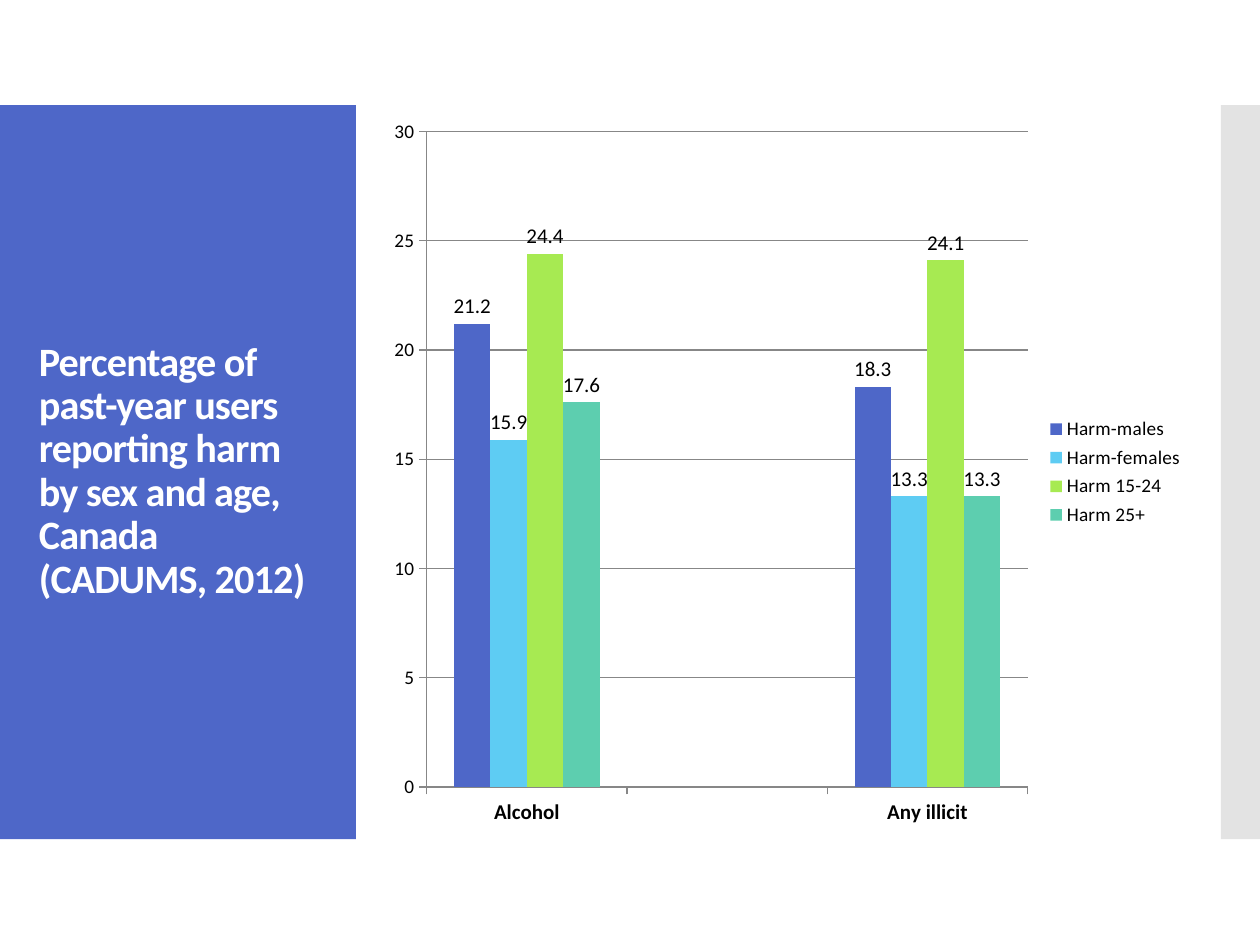
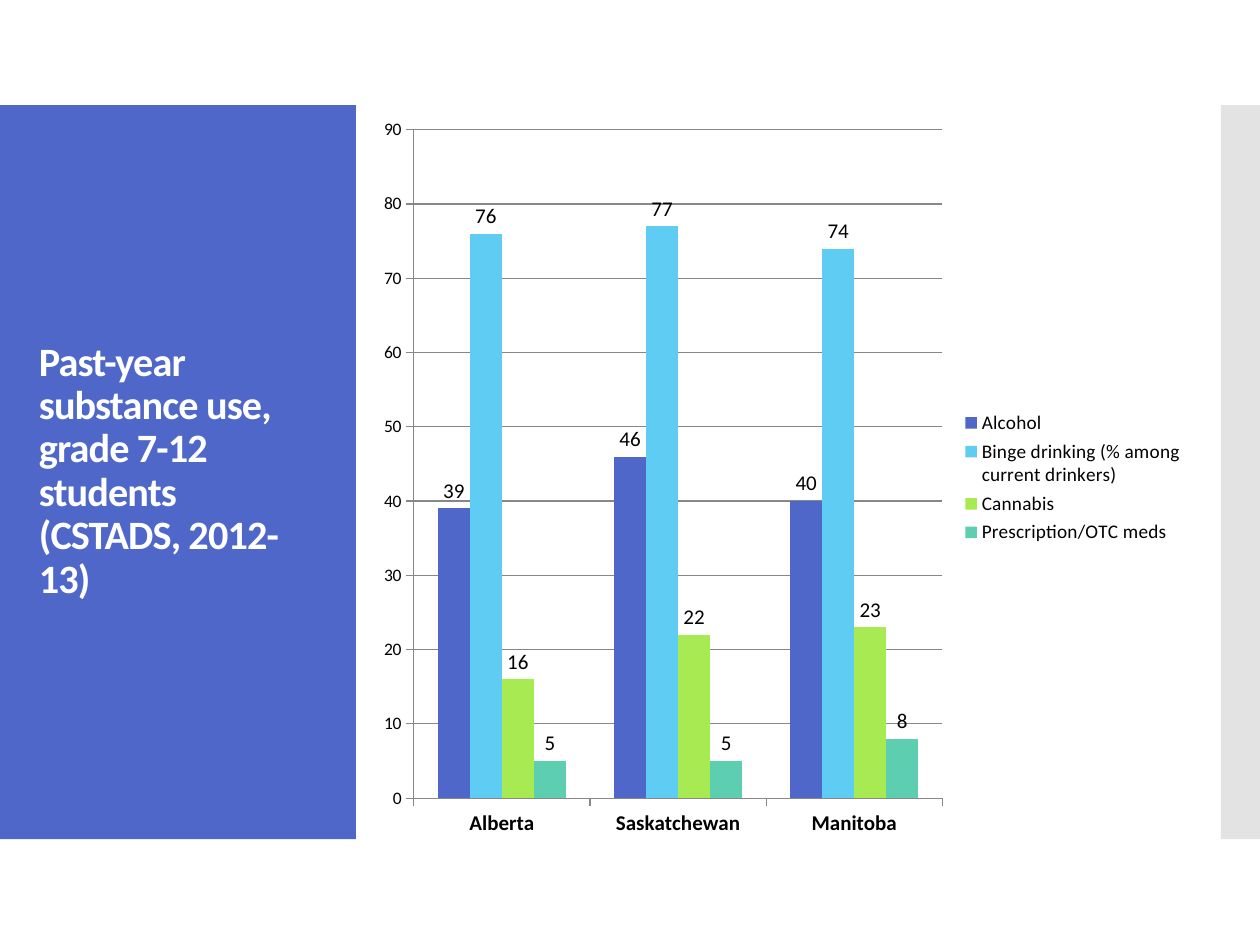
from lxml import etree
from pptx import Presentation
from pptx.chart.data import CategoryChartData
from pptx.dml.color import RGBColor
from pptx.enum.chart import XL_CHART_TYPE, XL_LABEL_POSITION, XL_LEGEND_POSITION, XL_TICK_MARK
from pptx.enum.shapes import MSO_SHAPE
from pptx.enum.text import MSO_ANCHOR, MSO_AUTO_SIZE, PP_ALIGN
from pptx.oxml.ns import qn
from pptx.util import Pt

COLUMNS = XL_CHART_TYPE.COLUMN_CLUSTERED
ABOVE_BAR = XL_LABEL_POSITION.OUTSIDE_END
LEGEND_RIGHT = XL_LEGEND_POSITION.RIGHT
TICK_OUT, TICK_NONE = XL_TICK_MARK.OUTSIDE, XL_TICK_MARK.NONE
RECTANGLE = MSO_SHAPE.RECTANGLE
MIDDLE = MSO_ANCHOR.MIDDLE
NO_FIT = MSO_AUTO_SIZE.NONE
LEFT = PP_ALIGN.LEFT

THEME = {
    "font": "Calibri",
    "blue": RGBColor(0x4E, 0x67, 0xC8),
    "gray": RGBColor(0xC8, 0xC8, 0xC8),
    "white": RGBColor(0xFF, 0xFF, 0xFF),
    "black": RGBColor(0x00, 0x00, 0x00),
    "rule": RGBColor(0x87, 0x87, 0x87),
    "series": [RGBColor.from_string(c) for c in ("4E67C8", "5ECCF3", "A7EA52", "5DCEAF")],
    "title_size": Pt(23),
    "label_size": Pt(12),
    "legend_size": Pt(11),
}

BAND_TOP, BAND_HEIGHT = Pt(60), Pt(419.5)
BANDS = [  # left, width, colour, opacity in percent
    (Pt(0), Pt(203.4), THEME["blue"], 100),
    (Pt(697.7), Pt(22.3), THEME["gray"], 50),
]
TITLE_BOX = {"left": Pt(15), "top": Pt(88.5), "width": Pt(174.4), "height": Pt(362)}

SURVEYS = [
    {
        "title": "Percentage of past-year users reporting harm by sex and age, Canada \v(CADUMS, 2012)",
        "box": (Pt(216), Pt(60), Pt(468), Pt(419.5)),
        "axis_size": Pt(11),
        "scale": {"minimum_scale": 0, "maximum_scale": 30, "major_unit": 5},
        "categories": ["Alcohol", "", "Any illicit"],
        "series": {
            "Harm-males": (21.2, None, 18.3),
            "Harm-females": (15.9, None, 13.3),
            "Harm 15-24": (24.4, None, 24.1),
            "Harm 25+": (17.6, None, 13.3),
        },
    },
    {
        "title": "Past-year substance use, grade 7-12 students (CSTADS, 2012-13)",
        "box": (Pt(210), Pt(60), Pt(474), Pt(426)),
        "axis_size": Pt(10),
        "scale": {"minimum_scale": 0, "maximum_scale": 90, "major_unit": 10},
        "categories": ["Alberta", "Saskatchewan", "Manitoba"],
        "series": {
            "Alcohol": (39, 46, 40),
            "Binge drinking (% among current drinkers)": (76, 77, 74),
            "Cannabis": (16, 22, 23),
            "Prescription/OTC meds": (5, 5, 8),
        },
    },
]


def apply(target, **values):
    for name, value in values.items():
        setattr(target, name, value)


def style_font(font, size, color=THEME["black"], bold=False):
    apply(font, name=THEME["font"], size=size, bold=bold)
    font.color.rgb = color


deck = Presentation()
apply(deck, slide_width=Pt(720), slide_height=Pt(540))
title_only = deck.slide_layouts[5]
slides = [deck.slides.add_slide(title_only) for survey in SURVEYS]

# Bands: drawn once, then moved behind the title of the shared layout
layout_title = title_only.placeholders[0]
for band_id, (left, width, color, opacity) in enumerate(BANDS, start=20):
    band = slides[0].shapes.add_shape(RECTANGLE, left, BAND_TOP, width, BAND_HEIGHT)
    band.shadow.inherit = False
    band.fill.solid()
    band.fill.fore_color.rgb = color
    band.line.fill.background()
    if opacity < 100:
        tint = band.element.spPr.find(qn("a:solidFill")).find(qn("a:srgbClr"))
        etree.SubElement(tint, qn("a:alpha"), val=str(opacity * 1000))
    band.element.nvSpPr.cNvPr.set("id", str(band_id))
    layout_title.element.addprevious(band.element)

for slide, survey in zip(slides, SURVEYS):
    # Title on the blue band
    title = slide.shapes.title
    apply(title, **TITLE_BOX)
    title.text_frame.text = survey["title"]
    apply(title.text_frame, vertical_anchor=MIDDLE, word_wrap=True, auto_size=NO_FIT)
    heading = title.text_frame.paragraphs[0]
    apply(heading, alignment=LEFT, line_spacing=0.9)
    for run in heading.runs:
        style_font(run.font, THEME["title_size"], THEME["white"], bold=True)
        run.font._element.set("spc", "-50")

    # Survey results
    results = CategoryChartData()
    results.categories = survey["categories"]
    for name, values in survey["series"].items():
        results.add_series(name, values)
    chart = slide.shapes.add_chart(COLUMNS, *survey["box"], results).chart
    apply(chart, has_title=False, has_legend=True)
    style_font(chart.font, survey["axis_size"])

    # Columns and their values
    columns = chart.plots[0]
    apply(columns, gap_width=150, overlap=0, vary_by_categories=False, has_data_labels=True)
    apply(columns.data_labels, show_value=True, position=ABOVE_BAR)
    style_font(columns.data_labels.font, THEME["label_size"])
    for series, color in zip(columns.series, THEME["series"]):
        series.format.fill.solid()
        series.format.fill.fore_color.rgb = color

    # Axes and gridlines
    categories, percent = chart.category_axis, chart.value_axis
    apply(percent, has_major_gridlines=True, **survey["scale"])
    for axis in (categories, percent):
        apply(axis, major_tick_mark=TICK_OUT, minor_tick_mark=TICK_NONE)
    for ruled in (categories, percent, percent.major_gridlines):
        ruled.format.line.color.rgb = THEME["rule"]
        ruled.format.line.width = Pt(0.75)
    style_font(categories.tick_labels.font, THEME["label_size"], bold=True)
    style_font(percent.tick_labels.font, survey["axis_size"])

    # Legend
    apply(chart.legend, position=LEGEND_RIGHT, include_in_layout=False)
    style_font(chart.legend.font, THEME["legend_size"])

deck.save("out.pptx")
